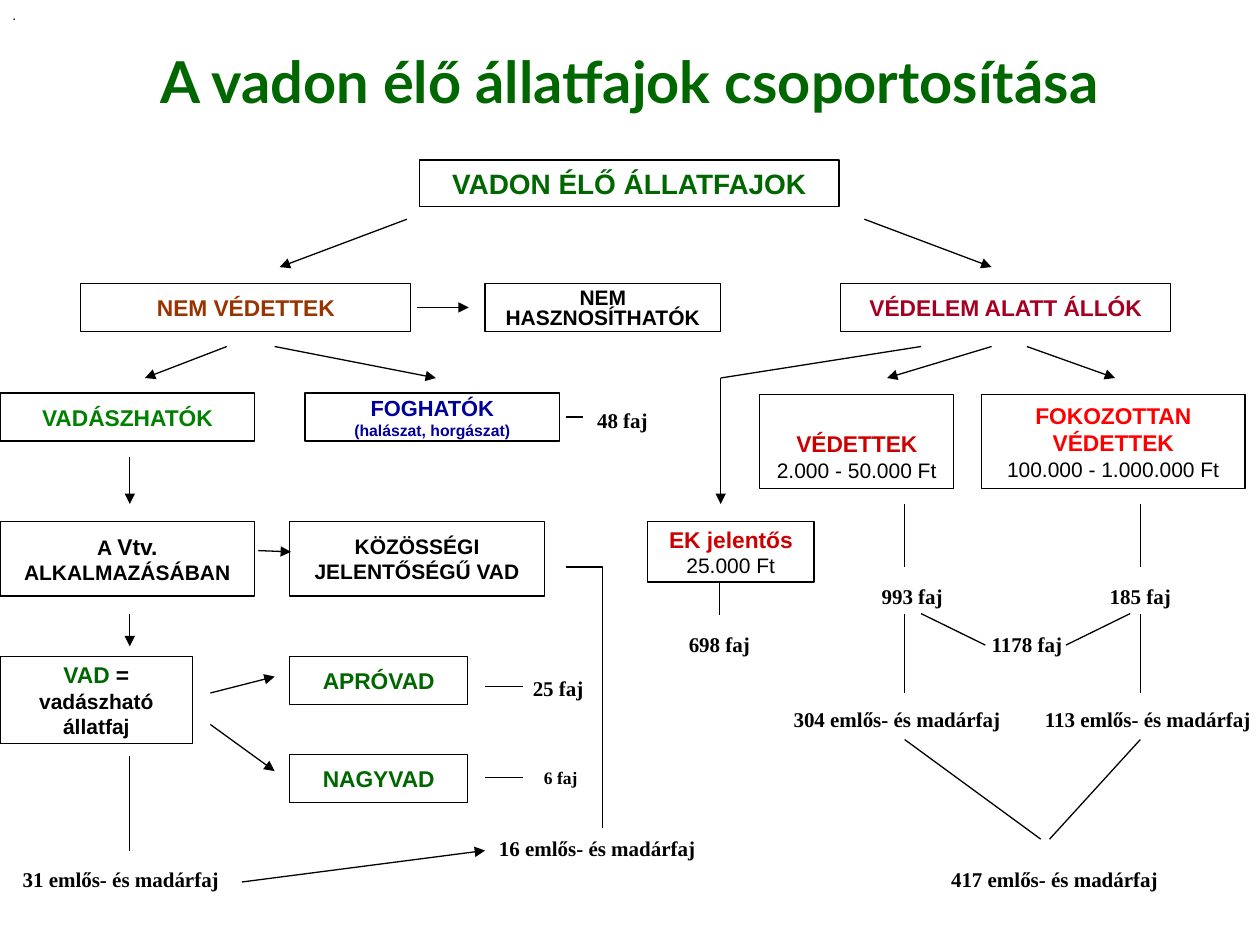
from dataclasses import dataclass

from lxml import etree
from pptx import Presentation
from pptx.dml.color import RGBColor
from pptx.enum.shapes import MSO_CONNECTOR, MSO_SHAPE
from pptx.enum.text import MSO_ANCHOR, PP_ALIGN
from pptx.oxml.ns import qn
from pptx.slide import Slide
from pptx.util import Inches, Pt

STRAIGHT, ELBOW = MSO_CONNECTOR.STRAIGHT, MSO_CONNECTOR.ELBOW
RECTANGLE = MSO_SHAPE.RECTANGLE
TOP, MIDDLE, BOTTOM = MSO_ANCHOR.TOP, MSO_ANCHOR.MIDDLE, MSO_ANCHOR.BOTTOM
LEFT, CENTER = PP_ALIGN.LEFT, PP_ALIGN.CENTER

BLACK = RGBColor(0x00, 0x00, 0x00)
WHITE = RGBColor(0xFF, 0xFF, 0xFF)
DARK_GREEN = RGBColor(0x00, 0x66, 0x00)
GREEN = RGBColor(0x00, 0x80, 0x00)
BROWN = RGBColor(0x99, 0x33, 0x00)
NAVY = RGBColor(0x00, 0x00, 0x99)
CRIMSON = RGBColor(0xA5, 0x00, 0x21)
DARK_RED = RGBColor(0xCC, 0x00, 0x00)
RED = RGBColor(0xFF, 0x00, 0x00)

LINE_WIDTH = Pt(0.75)
ROW_HEIGHT = 0.38
SHORT_COUNT, LONG_COUNT = 0.6, 1.7


def fill_paragraph(paragraph, runs, font="Arial", align=CENTER):
    """Each run is (text, size, colour, bold); a final newline is a line break."""
    paragraph.alignment = align
    for text, size, color, bold in runs:
        run = paragraph.add_run()
        run.text = text.rstrip("\n")
        run.font.name, run.font.size, run.font.bold = font, Pt(size), bold
        run.font.color.rgb = color
        if text.endswith("\n"):
            paragraph.add_line_break()


def tighten(paragraph):
    paragraph.line_spacing = 0.8
    paragraph.space_before = Pt(2.4)


@dataclass
class Region:
    """Part of the slide; its pieces are placed in inches from its corner."""
    slide: Slide
    left: float
    top: float

    def at(self, x, y):
        return Inches(self.left + x), Inches(self.top + y)

    def box(self, x, y, width, height, *paragraphs, anchor=MIDDLE, insets=(0.05, 0.05)):
        box = self.slide.shapes.add_shape(
            RECTANGLE, *self.at(x, y), Inches(width), Inches(height))
        box.shadow.inherit = False
        box.fill.solid()
        box.fill.fore_color.rgb = WHITE
        box.line.color.rgb = BLACK
        box.line.width = LINE_WIDTH
        frame = box.text_frame
        frame.word_wrap = True
        frame.vertical_anchor = anchor
        frame.margin_top, frame.margin_bottom = map(Inches, insets)
        for index, runs in enumerate(paragraphs):
            paragraph = frame.add_paragraph() if index else frame.paragraphs[0]
            fill_paragraph(paragraph, runs)
        return box

    def text(self, x, y, width, height, run, font, anchor=TOP, align=CENTER, inset=0.1):
        frame = self.slide.shapes.add_textbox(
            *self.at(x, y), Inches(width), Inches(height)).text_frame
        frame.word_wrap = True
        frame.vertical_anchor = anchor
        frame.margin_left = frame.margin_right = Inches(inset)
        fill_paragraph(frame.paragraphs[0], [run], font, align)
        return frame.paragraphs[0]

    def count(self, text, center, y, width=SHORT_COUNT, height=0.2, size=12):
        tighten(self.text(center - width / 2, y, width, height,
                          (text, size, BLACK, True), "Times New Roman", inset=0))

    def line(self, x1, y1, x2, y2, arrow=False, kind=STRAIGHT):
        line = self.slide.shapes.add_connector(kind, *self.at(x1, y1), *self.at(x2, y2))
        line.line.color.rgb = BLACK
        line.line.width = LINE_WIDTH
        properties = line._element.spPr
        if kind == ELBOW:
            properties.find(qn("a:prstGeom")).set("prst", "bentConnector2")
        if arrow:
            etree.SubElement(properties.find(qn("a:ln")), qn("a:tailEnd"), type="triangle")
        etree.SubElement(properties, qn("a:effectLst"))

    def arrow(self, x1, y1, x2, y2):
        self.line(x1, y1, x2, y2, arrow=True)


def add_heading(region):
    region.text(0.5, 0.13, 9, 1.02,
                ("A vadon élő állatfajok csoportosítása", 33, DARK_GREEN, True),
                "Lato", anchor=MIDDLE)
    region.text(0, 0, 9.99, 7.5, (".", 8, BLACK, False), "Arial", align=LEFT)


def add_root(region):
    region.box(1.11, 0, 3.33, 0.37, [("VADON ÉLŐ ÁLLATFAJOK", 16, DARK_GREEN, True)])
    region.arrow(1.01, 0.47, 0, 0.85)
    region.arrow(4.64, 0.47, 5.65, 0.85)


def add_unprotected(region):
    # Main groups
    region.box(0.64, 0, 2.62, ROW_HEIGHT, [("NEM VÉDETTEK", 13, BROWN, True)])
    unusable = region.box(3.85, 0, 1.87, ROW_HEIGHT,
                          [("NEM HASZNOSÍTHATÓK", 12, BLACK, True)], insets=(0.04, 0.01))
    tighten(unusable.text_frame.paragraphs[0])
    region.box(0, 0.87, 2.02, ROW_HEIGHT, [("VADÁSZHATÓK", 13, GREEN, True)])
    region.box(2.42, 0.87, 2.02, ROW_HEIGHT,
               [("FOGHATÓK", 12.5, NAVY, True)],
               [("(halászat, horgászat)", 9, NAVY, True)], insets=(0.01, 0.01))

    # Game species
    region.box(0, 1.89, 2.02, 0.59, [("A ", 12, BLACK, True), ("Vtv.", 13, BLACK, True),
                                     (" ALKALMAZÁSÁBAN", 12, BLACK, True)])
    region.box(2.3, 1.89, 2.02, 0.59, [("KÖZÖSSÉGI JELENTŐSÉGŰ VAD", 12, BLACK, True)])
    region.box(0, 2.96, 1.53, 0.69, [("VAD", 13, DARK_GREEN, True), (" =", 13, BLACK, True),
                                     (" vadászható állatfaj", 12, BLACK, True)])
    for game, y in (("APRÓVAD", 2.96), ("NAGYVAD", 3.74)):
        region.box(2.3, y, 1.41, ROW_HEIGHT, [(game, 13, DARK_GREEN, True)])

    # Species counts
    region.count("48 faj", 4.94, 0.97)
    region.count("25 faj", 4.43, 3.1)
    region.count("6 faj", 4.45, 3.82, size=10)
    region.count("16 emlős- és madárfaj", 4.74, 4.37, LONG_COUNT, 0.25)
    region.count("31 emlős- és madárfaj", 0.96, 4.62, LONG_COUNT, 0.26)

    # Arrows and plain links
    for ends in ((3.31, 0.19, 3.72, 0.19), (1.8, 0.5, 1.15, 0.75), (2.18, 0.5, 3.46, 0.75),
                 (1.03, 1.38, 1.03, 1.75), (2.05, 2.12, 2.31, 2.13),
                 (1.03, 2.62, 1.03, 2.88), (1.67, 3.25, 2.18, 3.12),
                 (1.67, 3.5, 2.18, 3.87), (1.92, 4.75, 3.85, 4.5)):
        region.arrow(*ends)
    for ends in ((4.49, 1.06, 4.63, 1.06), (3.85, 3.2, 4.15, 3.2),
                 (3.85, 3.92, 4.15, 3.92), (1.03, 3.75, 1.03, 4.5)):
        region.line(*ends)
    region.line(4.49, 2.25, 4.78, 4.32, kind=ELBOW)


def add_protected(region):
    # Protection levels and fines
    region.box(1.53, 0, 2.62, ROW_HEIGHT, [("VÉDELEM ALATT ÁLLÓK", 13, CRIMSON, True)])
    region.box(0.89, 0.88, 1.54, 0.75,
               [("VÉDETTEK", 13, DARK_RED, True), (" ", 12, DARK_RED, True),
                ("2.000 - 50.000 Ft", 12, BLACK, False)], anchor=BOTTOM)
    region.box(2.65, 0.88, 2.09, 0.75,
               [("FOKOZOTTAN VÉDETTEK\n", 13, RED, True),
                ("100.000 - 1.000.000 Ft", 12, BLACK, False)])
    region.box(0, 1.89, 1.32, 0.48,
               [("EK jelentős", 13, DARK_RED, True), (" ", 12, DARK_RED, True),
                ("25.000 Ft", 12, BLACK, False)])

    # Species counts
    region.count("698 faj", 0.57, 2.75)
    region.count("993 faj", 2.1, 2.37)
    region.count("185 faj", 3.91, 2.37)
    region.count("1178 faj", 3.01, 2.75)
    region.count("304 emlős- és madárfaj", 1.98, 3.35, LONG_COUNT)
    region.count("113 emlős- és madárfaj", 3.97, 3.35, LONG_COUNT)
    region.count("417 emlős- és madárfaj", 3.23, 4.62, LONG_COUNT, 0.26)

    # Branches from the heading box
    region.arrow(2.73, 0.5, 1.9, 0.75)
    region.arrow(3.01, 0.5, 3.71, 0.75)
    region.line(2.17, 0.5, 0.58, 0.75)
    region.arrow(0.58, 0.75, 0.58, 1.75)
    region.line(0.57, 2.37, 0.57, 2.63)

    # Two columns that meet in the sums
    for column, sum_start, sum_end, total_end in ((2.04, 2.17, 2.68, 3.12),
                                                  (3.91, 3.83, 3.32, 3.19)):
        region.line(column, 1.75, column, 2.25)
        region.line(column, 2.62, column, 3.25)
        region.line(sum_start, 2.62, sum_end, 2.87)
        region.line(column, 3.62, total_end, 4.41)


def main():
    presentation = Presentation()
    presentation.slide_width, presentation.slide_height = Inches(10), Inches(7.5)
    slide = presentation.slides.add_slide(presentation.slide_layouts[6])
    add_heading(Region(slide, 0, 0))
    add_root(Region(slide, 2.22, 1.27))
    add_unprotected(Region(slide, 0, 2.25))
    add_protected(Region(slide, 5.14, 2.25))
    presentation.save("out.pptx")


if __name__ == "__main__":
    main()
